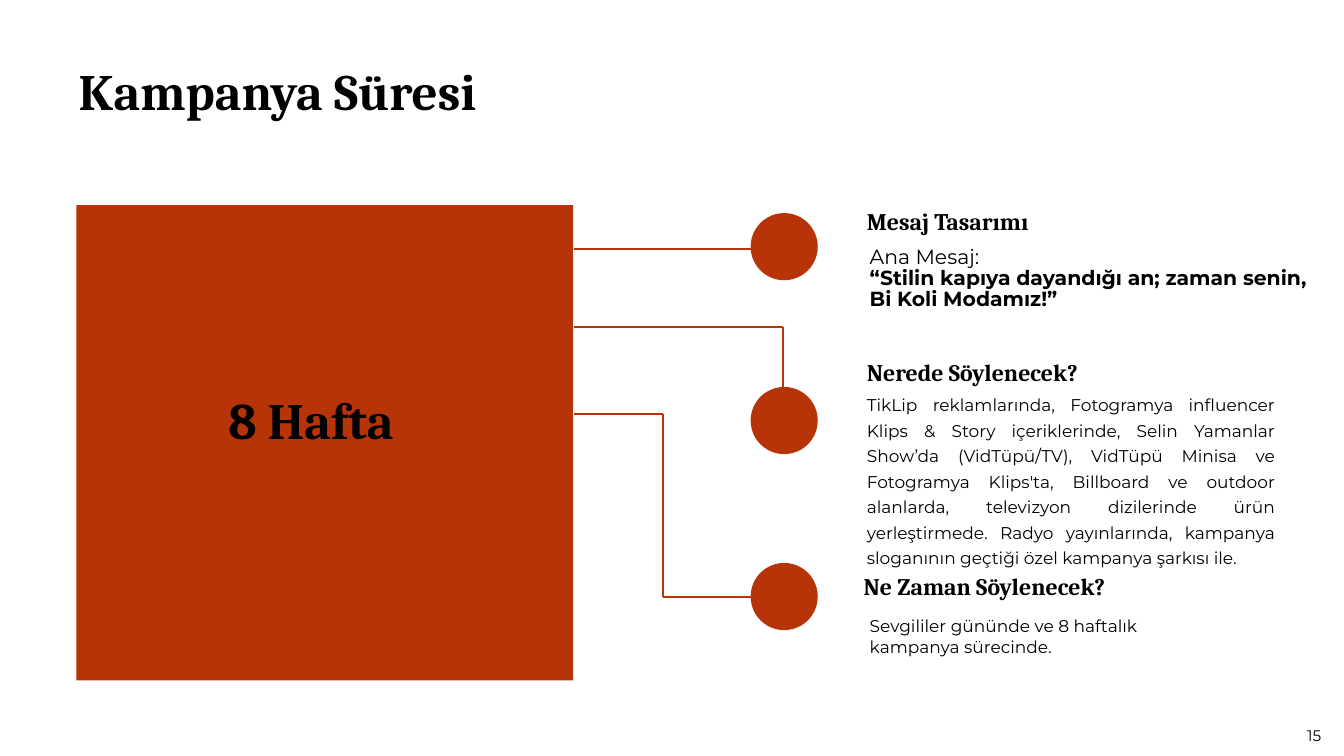
from lxml import etree
from pptx import Presentation
from pptx.dml.color import RGBColor
from pptx.enum import shapes, text
from pptx.oxml import ns
from pptx.util import Cm, Pt

RUST = RGBColor(0xB7, 0x34, 0x08)
BLACK = RGBColor(0, 0, 0)
SERIF, SANS = "Cambria", "Montserrat"
LEFT, CENTER, JUST = (text.PP_ALIGN.LEFT, text.PP_ALIGN.CENTER,
                      text.PP_ALIGN.JUSTIFY)
DOT = 2.79

TOPICS = [
    dict(top=8.85, title="Mesaj Tasarımı", head=(4.83, -0.28),
         lines=["Ana Mesaj:",
                "“Stilin kapıya dayandığı an; zaman senin, Bi Koli Modamız!”"],
         body=(4.7, 1.29, 18.9, 2.92),
         look=dict(size=24, gap=Pt(24.8), pad=(0.25, 0.13))),
    dict(top=16.07, title="Nerede Söylenecek?", head=(4.83, -1.22),
         lines=["TikLip reklamlarında, Fotogramya influencer Klips & Story "
                "içeriklerinde, Selin Yamanlar Show’da (VidTüpü/TV), VidTüpü "
                "Minisa ve Fotogramya Klips'ta, Billboard ve outdoor "
                "alanlarda, televizyon dizilerinde ürün yerleştirmede. Radyo "
                "yayınlarında, kampanya sloganının geçtiği özel kampanya "
                "şarkısı ile."],
         body=(4.7, -0.02, 17.22, 7.65),
         look=dict(size=20, gap=1.25, align=JUST, pad=(0.13, 0.13))),
    dict(top=23.38, title="Ne Zaman Söylenecek?", head=(4.7, 0.38),
         lines=["Sevgililer gününde ve 8 haftalık kampanya sürecinde."],
         body=(4.7, 2.06, 14.71, 1.96),
         look=dict(size=20, pad=(0.25, 0.13))),
]


def label(slide, box, lines, size, face=SANS, bold=False, gap=None,
          align=LEFT, pad=(0.13, 0.13)):
    """Write lines of text in a box and return its paragraphs."""
    frame = slide.shapes.add_textbox(*map(Cm, box)).text_frame
    frame.word_wrap = True
    frame.auto_size = text.MSO_AUTO_SIZE.SHAPE_TO_FIT_TEXT
    frame.margin_left = frame.margin_right = Cm(pad[0])
    frame.margin_top = frame.margin_bottom = Cm(pad[1])
    frame.text = "\n".join(lines)
    for para in frame.paragraphs:
        para.alignment = align
        para.line_spacing = gap
        for run in para.runs:
            font = run.font
            font.name, font.size, font.bold = face, Pt(size), bold
            font.color.rgb = BLACK
    return frame.paragraphs


def solid(slide, kind, box):
    """Draw a plain rust shape."""
    shape = slide.shapes.add_shape(kind, *map(Cm, box))
    shape.shadow.inherit = False
    shape.fill.solid()
    shape.fill.fore_color.rgb = RUST
    shape.line.fill.background()


def panel(slide, box):
    """Draw the large block with the campaign length in it."""
    x, y, w, h = box
    solid(slide, shapes.MSO_SHAPE.RECTANGLE, box)
    label(slide, (x + 2.51, y + 7.47, 14.48, 2.82), ["8 Hafta"], 60, SERIF,
          True, align=CENTER, pad=(0.25, 0.13))


def wires(slide, box):
    """Draw the routes from the block to the dots."""
    x, y, w, h = box
    mid, end = x + 3.71, x + 8.69
    routes = [
        [(x, y), (x + w, y)],
        [(x, y + 3.22), (end, y + 3.22), (end, y + 7.1)],
        [(x, y + 6.86), (mid, y + 6.86), (mid, y + h), (x + w, y + h)],
    ]
    for route in routes:
        for start, stop in zip(route, route[1:]):
            wire = slide.shapes.add_connector(
                shapes.MSO_CONNECTOR.STRAIGHT, *map(Cm, start + stop))
            wire.line.color.rgb = RUST
            wire.line.width = Pt(2.25)
            etree.SubElement(wire._element.spPr, ns.qn("a:effectLst"))


def topic(slide, box, title, head, lines, body, look):
    """Draw a dot with its heading and its text."""
    x, y, w, h = box
    solid(slide, shapes.MSO_SHAPE.OVAL, box)
    label(slide, (x + head[0], y + head[1], 17.09, 1.19), [title], 28, SERIF,
          True, pad=(0, 0))
    paras = label(slide, (x + body[0], y + body[1], *body[2:]), lines, **look)
    for para in paras[1:]:
        para.runs[0].font.bold = True


def main():
    """Build the campaign length slide."""
    deck = Presentation()
    deck.slide_width, deck.slide_height = Pt(1583), Pt(890)
    slide = deck.slides.add_slide(deck.slide_layouts[6])
    label(slide, (3.14, 2.64, 49.4, 2.57), ["Kampanya Süresi"], 60, SERIF,
          True, gap=0.9)
    panel(slide, (3.17, 8.52, 20.65, 19.74))
    wires(slide, (23.85, 10.35, 7.6, 14.43))
    for item in TOPICS:
        parts = dict(item)
        topic(slide, (31.19, parts.pop("top"), DOT, DOT), **parts)
    label(slide, (54.18, 30.05, 0.99, 1.02), ["15"], 18)
    deck.save("out.pptx")


if __name__ == "__main__":
    main()
